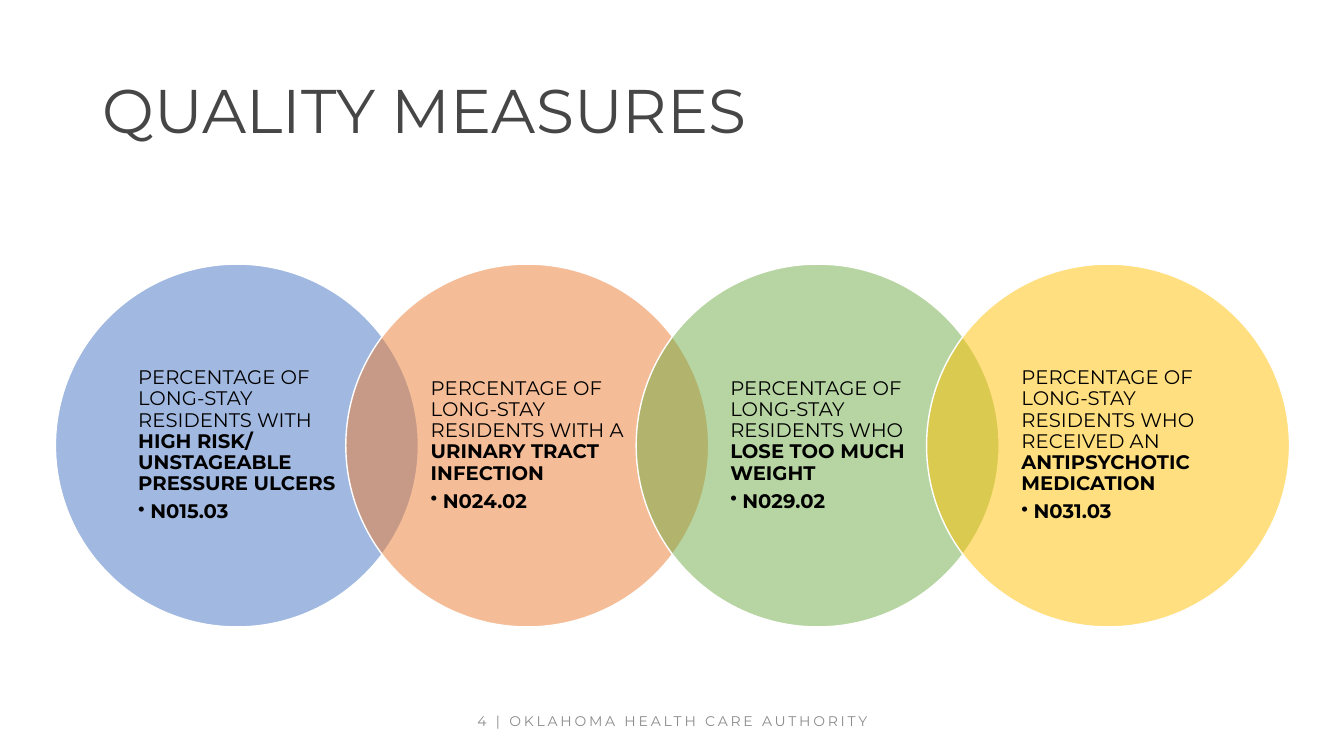
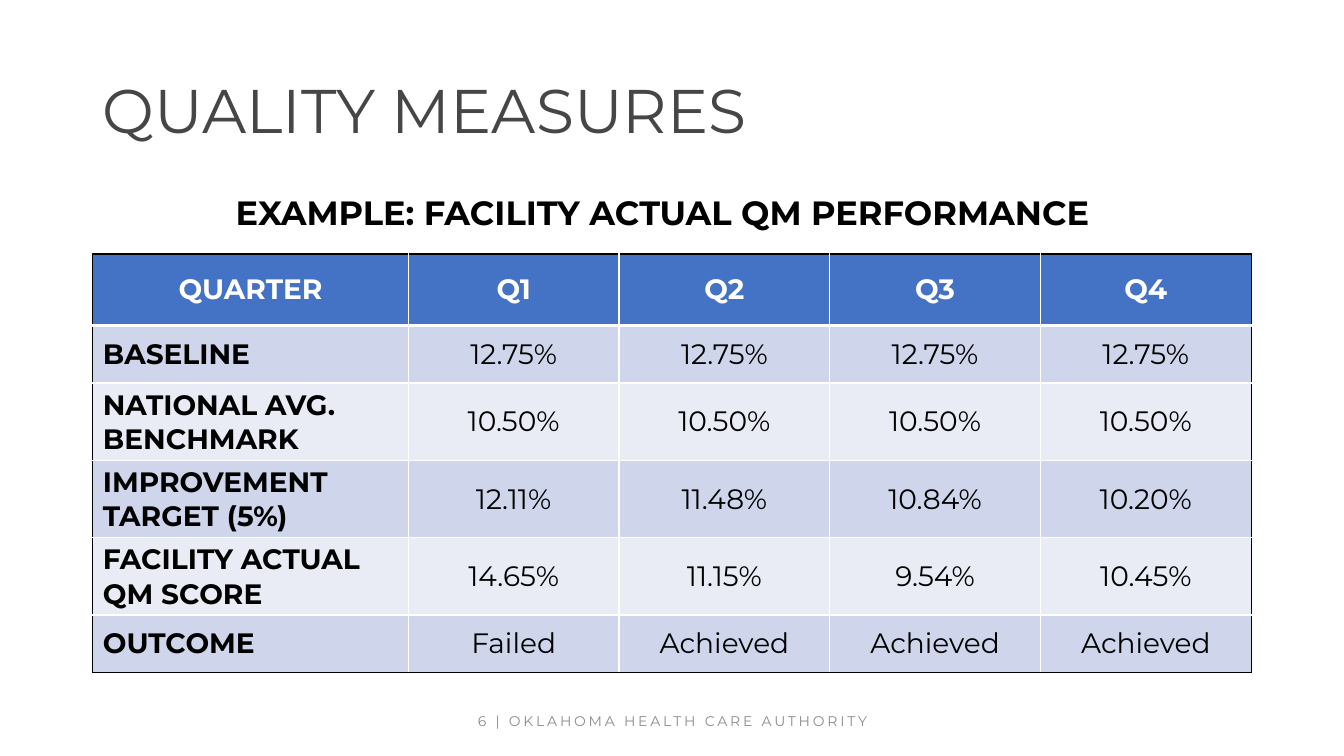
import pptx
import pptx.dml.color
import pptx.enum.shapes
import pptx.enum.text
import pptx.oxml.ns
import pptx.util
from lxml import etree
from pptx.util import Inches

ALIGN = pptx.enum.text.PP_ALIGN
MIDDLE = pptx.enum.text.MSO_ANCHOR.MIDDLE

# Shared look
FONT = "Montserrat"
BLACK, WHITE = "000000", "FFFFFF"
TITLE_COLOR, FOOTER_COLOR = "464646", "8C8C8C"
HEADER_FILL = "4472C4"
BAND_FILLS = ("CFD5EA", "E9EBF5")
MARGIN, CONTENT_WIDTH = 0.92, 11.5
ORGANIZATION = "OKLAHOMA HEALTH CARE AUTHORITY"

# Measures: circle colour, opening words, emphasised words, code
MEASURES = [
    ("4472C4", "PERCENTAGE OF LONG-STAY RESIDENTS WITH ",
     "HIGH RISK/ UNSTAGEABLE PRESSURE ULCERS", "N015.03"),
    ("ED7D31", "PERCENTAGE OF LONG-STAY RESIDENTS WITH A ",
     "URINARY TRACT INFECTION", "N024.02"),
    ("70AD47", "PERCENTAGE OF LONG-STAY RESIDENTS WHO ",
     "LOSE TOO MUCH WEIGHT", "N029.02"),
    ("FFC000", "PERCENTAGE OF LONG-STAY RESIDENTS WHO RECEIVED AN ",
     "ANTIPSYCHOTIC MEDICATION", "N031.03"),
]
CIRCLE_LEFT, CIRCLE_TOP, CIRCLE_SIZE = 0.55, 2.62, 3.6
CIRCLE_STEP = 0.8 * CIRCLE_SIZE
LABEL_SIZE = 2.54

# Facility performance by quarter
PERFORMANCE = [
    ("QUARTER", "Q1", "Q2", "Q3", "Q4"),
    ("BASELINE", "12.75%", "12.75%", "12.75%", "12.75%"),
    ("NATIONAL AVG. BENCHMARK", "10.50%", "10.50%", "10.50%", "10.50%"),
    ("IMPROVEMENT TARGET (5%)", "12.11%", "11.48%", "10.84%", "10.20%"),
    ("FACILITY ACTUAL QM SCORE", "14.65%", "11.15%", "9.54%", "10.45%"),
    ("OUTCOME", "Failed", "Achieved", "Achieved", "Achieved"),
]
COLUMN_WIDTHS = [3.13] + [2.09] * 4
ROW_HEIGHTS = [0.71, 0.57, 0.71, 0.71, 0.71, 0.57]


# Basic helpers
def rgb(color):
    return pptx.dml.color.RGBColor.from_string(color)


def apply_format(target, values):
    for name, value in values.items():
        setattr(target, name, value)


def add_child(parent, tag, **attributes):
    return etree.SubElement(parent, pptx.oxml.ns.qn(tag), attributes)


def add_span(para, text, size, color=BLACK, bold=False):
    span = para.add_run()
    span.text = text
    apply_format(span.font, {"name": FONT, "size": pptx.util.Pt(size), "bold": bold})
    span.font.color.rgb = rgb(color)
    return span


def add_box(page, left, top, width, height, anchor):
    box = page.shapes.add_textbox(*map(Inches, (left, top, width, height)))
    apply_format(box.text_frame, {"word_wrap": True, "vertical_anchor": anchor})
    return box


# Title and footer for every slide
def add_page(deck, number):
    page = deck.slides.add_slide(deck.slide_layouts.get_by_name("Title Only"))
    title = page.shapes.title
    apply_format(title, {"left": Inches(MARGIN), "top": Inches(0.4),
                         "width": Inches(CONTENT_WIDTH), "height": Inches(1.45)})
    title.text_frame.vertical_anchor = MIDDLE
    para = title.text_frame.paragraphs[0]
    apply_format(para, {"alignment": ALIGN.LEFT, "line_spacing": 0.9})
    add_span(para, "QUALITY MEASURES", 44, TITLE_COLOR)

    footer = add_box(page, MARGIN, 6.95, CONTENT_WIDTH, 0.4, MIDDLE)
    para = footer.text_frame.paragraphs[0]
    para.alignment = ALIGN.CENTER
    span = add_span(para, f"{number} | {ORGANIZATION}", 10, FOOTER_COLOR)
    span.font._element.set("spc", "200")
    return page


# Overlapping circles
def add_circle(page, left, color):
    circle = page.shapes.add_shape(
        pptx.enum.shapes.MSO_SHAPE.OVAL, Inches(left), Inches(CIRCLE_TOP),
        Inches(CIRCLE_SIZE), Inches(CIRCLE_SIZE))
    circle.shadow.inherit = False
    circle.fill.solid()
    circle.fill.fore_color.rgb = rgb(color)
    fill_color = circle.element.spPr.find(
        pptx.oxml.ns.qn("a:solidFill") + "/" + pptx.oxml.ns.qn("a:srgbClr"))
    add_child(fill_color, "a:alpha", val="50000")
    circle.line.color.rgb = rgb(WHITE)
    circle.line.width = pptx.util.Pt(1)


def add_measure_label(page, left, opening, emphasis, code):
    inset = (CIRCLE_SIZE - LABEL_SIZE) / 2
    box = add_box(page, left + inset, CIRCLE_TOP + inset, LABEL_SIZE, LABEL_SIZE, MIDDLE)
    frame = box.text_frame
    apply_format(frame, {"margin_left": Inches(0.2), "margin_right": Inches(0.2),
                         "margin_top": Inches(0.02), "margin_bottom": Inches(0.02)})
    # Centre the left-aligned block within its box
    frame._txBody.bodyPr.set("anchorCtr", "1")

    para = frame.paragraphs[0]
    apply_format(para, {"line_spacing": 0.9, "space_after": pptx.util.Pt(5)})
    add_span(para, opening, 14)
    add_span(para, emphasis, 14, bold=True)

    para = frame.add_paragraph()
    apply_format(para, {"level": 1, "line_spacing": 0.9, "space_after": pptx.util.Pt(2)})
    add_span(para, code, 14, bold=True)
    properties = para._p.get_or_add_pPr()
    indent = Inches(0.12)
    properties.set("marL", str(indent))
    properties.set("indent", str(-indent))
    add_child(properties, "a:buChar", char="•")


# Performance table
def set_border(cell, side, color, width):
    line = add_child(cell._tc.get_or_add_tcPr(), f"a:ln{side}",
                     w=str(pptx.util.Pt(width)))
    add_child(add_child(line, "a:solidFill"), "a:srgbClr", val=color)


def format_cell(cell, row, column, text):
    last_row, last_column = len(PERFORMANCE) - 1, len(COLUMN_WIDTHS) - 1
    header = row == 0
    outer_sides = {"L": column == 0, "R": column == last_column,
                   "T": header, "B": row == last_row}
    for side, outer in outer_sides.items():
        width = 3 if header and side == "B" else 1
        set_border(cell, side, BLACK if outer else WHITE, width)
    cell.fill.solid()
    cell.fill.fore_color.rgb = rgb(HEADER_FILL if header else BAND_FILLS[(row - 1) % 2])
    cell.vertical_anchor = MIDDLE
    para = cell.text_frame.paragraphs[0]
    para.alignment = ALIGN.CENTER if header or column else ALIGN.LEFT
    add_span(para, text, 20, WHITE if header else BLACK, bold=header or column == 0)


def add_performance_table(page):
    table = page.shapes.add_table(
        len(PERFORMANCE), len(COLUMN_WIDTHS), Inches(MARGIN), Inches(2.52),
        Inches(sum(COLUMN_WIDTHS)), Inches(sum(ROW_HEIGHTS))).table
    for column, width in zip(table.columns, COLUMN_WIDTHS):
        column.width = Inches(width)
    for row, height in zip(table.rows, ROW_HEIGHTS):
        row.height = Inches(height)
    for row, texts in enumerate(PERFORMANCE):
        for column, text in enumerate(texts):
            format_cell(table.cell(row, column), row, column, text)


# Slides
def add_measures_page(deck):
    page = add_page(deck, 4)
    for index, (color, opening, emphasis, code) in enumerate(MEASURES):
        left = CIRCLE_LEFT + index * CIRCLE_STEP
        add_circle(page, left, color)
        add_measure_label(page, left, opening, emphasis, code)


def add_performance_page(deck):
    page = add_page(deck, 6)
    add_performance_table(page)
    box = add_box(page, 2.07, 1.85, 9, 0.5, pptx.enum.text.MSO_ANCHOR.TOP)
    para = box.text_frame.paragraphs[0]
    para.alignment = ALIGN.CENTER
    add_span(para, "EXAMPLE: FACILITY ACTUAL QM PERFORMANCE", 24, bold=True)


def main():
    deck = pptx.Presentation()
    apply_format(deck, {"slide_width": Inches(13.33), "slide_height": Inches(7.5)})
    add_measures_page(deck)
    add_performance_page(deck)
    deck.save("out.pptx")


if __name__ == "__main__":
    main()
